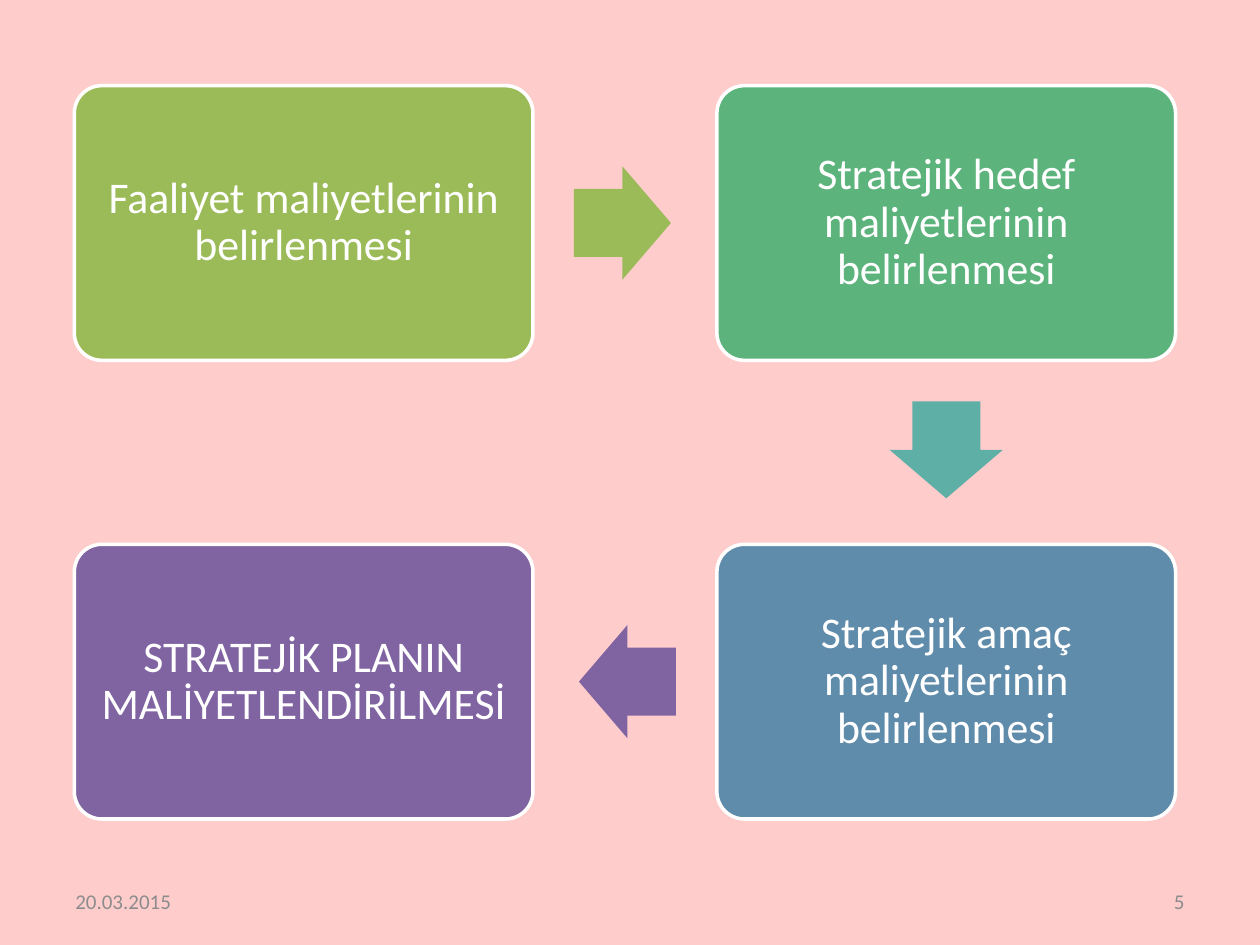
import pptx
import pptx.util
import pptx.dml.color
import pptx.enum.shapes
import pptx.enum.text
from dataclasses import dataclass

Inches = pptx.util.Inches
Pt = pptx.util.Pt
SHAPE = pptx.enum.shapes.MSO_SHAPE
ALIGN = pptx.enum.text.PP_ALIGN
MIDDLE = pptx.enum.text.MSO_ANCHOR.MIDDLE


@dataclass(frozen=True)
class Theme:
    font: str = "Calibri"
    background: str = "FFCCCC"
    white: str = "FFFFFF"
    muted: str = "8C8C8C"
    green: str = "9BBB59"
    emerald: str = "5CB37C"
    teal: str = "5EAFA6"
    blue: str = "608CAB"
    purple: str = "8064A2"
    step_size: int = 25
    footer_size: int = 12


THEME = Theme()


def rgb(value):
    return pptx.dml.color.RGBColor.from_string(value)


def write(sp, text, size, color, align=ALIGN.LEFT, spacing=None, inset=None):
    """Put one formatted paragraph, centred vertically, into a shape."""
    tf = sp.text_frame
    tf.word_wrap = True
    tf.vertical_anchor = MIDDLE
    if inset is not None:
        tf.margin_left = tf.margin_right = Inches(inset)
        tf.margin_top = tf.margin_bottom = Inches(inset)
    p = tf.paragraphs[0]
    p.alignment = align
    p.line_spacing = spacing
    r = p.add_run()
    r.text = text
    r.font.name = THEME.font
    r.font.size = Pt(size)
    r.font.color.rgb = rgb(color)


def add_filled(s, kind, box, fill, adjustments):
    sp = s.shapes.add_shape(kind, *(Inches(v) for v in box))
    sp.shadow.inherit = False
    sp.fill.solid()
    sp.fill.fore_color.rgb = rgb(fill)
    sp.line.fill.background()
    for i, value in enumerate(adjustments):
        sp.adjustments[i] = value
    return sp


def add_step(s, box, text, fill):
    sp = add_filled(s, SHAPE.ROUNDED_RECTANGLE, box, fill, [0.1])
    sp.line.color.rgb = rgb(THEME.white)
    sp.line.width = Pt(2)
    write(sp, text, THEME.step_size, THEME.white, ALIGN.CENTER, 0.9, 0.1)


def add_arrow(s, center, fill, rotation):
    w, h = 0.77, 0.9
    box = (center[0] - w / 2, center[1] - h / 2, w, h)
    sp = add_filled(s, SHAPE.RIGHT_ARROW, box, fill, [0.6, 0.5])
    sp.rotation = rotation


def add_process(s, left, top, width, height):
    """Four steps in the corners of the box, running clockwise."""
    w, h = 3.64, 2.18
    right, bottom = left + width - w, top + height - h
    steps = [
        (left, top, "Faaliyet maliyetlerinin belirlenmesi", THEME.green),
        (right, top, "Stratejik hedef maliyetlerinin belirlenmesi", THEME.emerald),
        (right, bottom, "Stratejik amaç maliyetlerinin belirlenmesi", THEME.blue),
        (left, bottom, "STRATEJİK PLANIN MALİYETLENDİRİLMESİ", THEME.purple),
    ]
    for x, y, text, fill in steps:
        add_step(s, (x, y, w, h), text, fill)

    # Arrows sit slightly nearer the step they leave
    shift = 0.02
    mid_x, mid_y = left + width / 2, top + height / 2
    add_arrow(s, (mid_x - shift, top + h / 2), THEME.green, 0)
    add_arrow(s, (right + w / 2, mid_y - shift), THEME.teal, 90)
    add_arrow(s, (mid_x + shift, bottom + h / 2), THEME.purple, 180)


def add_footer(s, left, top, width, height):
    """Date on the left and slide number on the right."""
    w = 2.33
    items = [(left, "20.03.2015", ALIGN.LEFT),
             (left + width - w, "5", ALIGN.RIGHT)]
    for x, text, align in items:
        sp = s.shapes.add_textbox(Inches(x), Inches(top), Inches(w), Inches(height))
        write(sp, text, THEME.footer_size, THEME.muted, align)


def main():
    prs = pptx.Presentation()
    prs.slide_width, prs.slide_height = Inches(10), Inches(7.5)
    s = prs.slides.add_slide(prs.slide_layouts[6])
    s.background.fill.solid()
    s.background.fill.fore_color.rgb = rgb(THEME.background)
    add_footer(s, 0.5, 6.95, 9, 0.4)
    add_process(s, 0.59, 0.68, 8.74, 5.82)
    prs.save("out.pptx")


if __name__ == "__main__":
    main()
